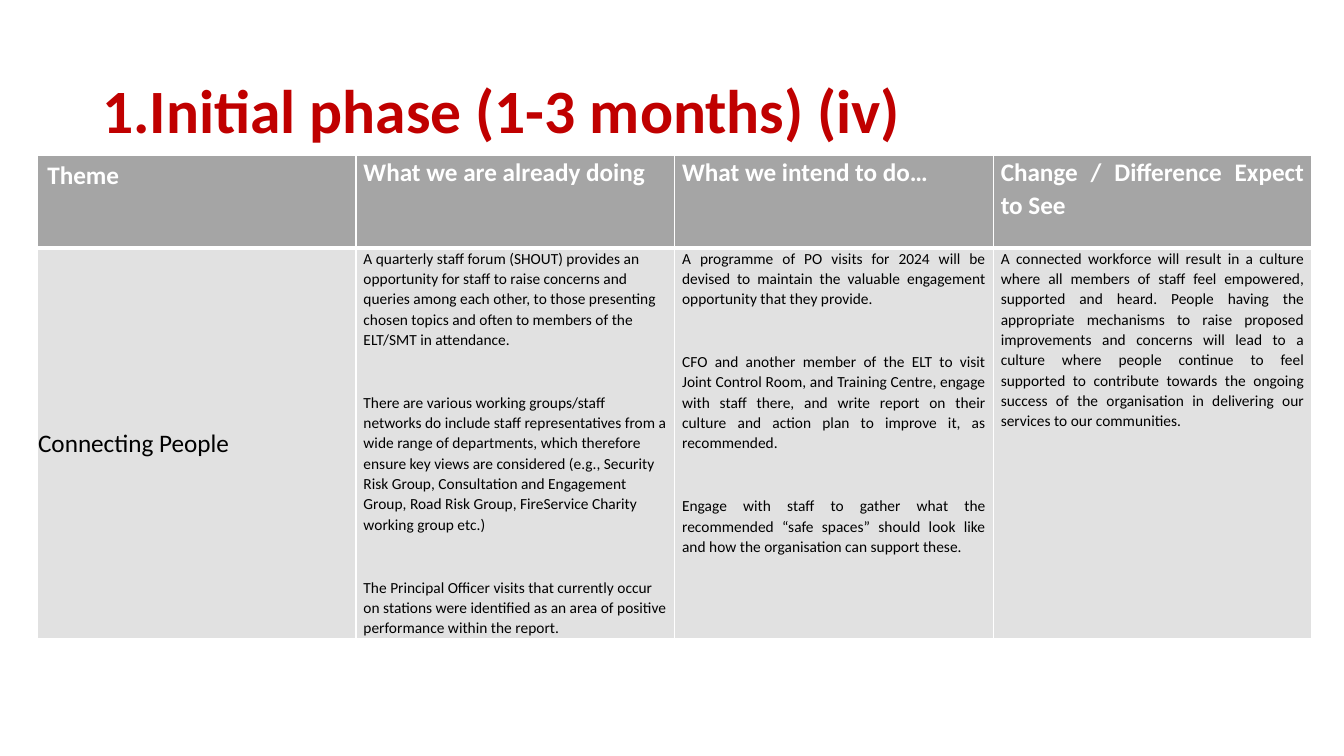
"""Build the slide with the theme, action and outcome table for the initial phase."""
import pptx
import pptx.dml.color
import pptx.enum.text
import pptx.oxml
import pptx.oxml.ns
import pptx.util

Cm, Pt = pptx.util.Cm, pptx.util.Pt
PP_ALIGN = pptx.enum.text.PP_ALIGN
MIDDLE = pptx.enum.text.MSO_ANCHOR.MIDDLE


def rgb(value):
    return pptx.dml.color.RGBColor.from_string(value)


def add_run(p, text, size, color, bold):
    r = p.add_run()
    r.text = text
    r.font.name = "Calibri"
    r.font.size = Pt(size)
    r.font.bold = bold
    r.font.color.rgb = rgb(color)


prs = pptx.Presentation()
prs.slide_width, prs.slide_height = Cm(33.87), Cm(19.05)
s = prs.slides.add_slide(prs.slide_layouts[6])

sp = s.shapes.add_textbox(Cm(2.33), Cm(1.01), Cm(29.21), Cm(3.68))
tf = sp.text_frame
tf.word_wrap = True
tf.vertical_anchor = MIDDLE
p = tf.paragraphs[0]
p.line_spacing = 0.9
add_run(p, "1.Initial phase (1-3 months) (iv)", 44, "C00000", True)

rows = [
    [
        ["Theme"],
        ["What we are already doing"],
        ["What we intend to do…"],
        ["Change / Difference Expect to See"],
    ],
    [
        ["Connecting People"],
        [
            "A quarterly staff forum (SHOUT) provides an opportunity for staff to raise concerns and "
            "queries among each other, to those presenting chosen topics and often to members of the "
            "ELT/SMT in attendance.",
            "There are various working groups/staff networks do include staff representatives from a "
            "wide range of departments, which therefore ensure key views are considered (e.g., Security "
            "Risk Group, Consultation and Engagement Group, Road Risk Group, FireService Charity working "
            "group etc.)",
            "The Principal Officer visits that currently occur on stations were identified as an area of "
            "positive performance within the report.",
        ],
        [
            "A programme of PO visits for 2024 will be devised to maintain the valuable engagement "
            "opportunity that they provide.",
            "CFO and another member of the ELT to visit Joint Control Room, and Training Centre, engage "
            "with staff there, and write report on their culture and action plan to improve it, as "
            "recommended.",
            "Engage with staff to gather what the recommended “safe spaces” should look like and how the "
            "organisation can support these.",
        ],
        [
            "A connected workforce will result in a culture where all members of staff feel empowered, "
            "supported and heard. People having the appropriate mechanisms to raise proposed improvements "
            "and concerns will lead to a culture where people continue to feel supported to contribute "
            "towards the ongoing success of the organisation in delivering our services to our communities.",
        ],
    ],
]
heights = [2.33, 9.83]
fills = ["A5A5A5", "E1E1E1"]
colors = ["FFFFFF", "000000"]
borders = [
    {"lnL": 1, "lnR": 1, "lnT": 1, "lnB": 3},
    {"lnL": 1, "lnR": 1, "lnT": 3, "lnB": 1},
]

table = s.shapes.add_table(2, 4, Cm(0.94), Cm(3.92), Cm(32.12), Cm(sum(heights))).table
for column in table.columns:
    column.width = Cm(8.03)

for i, row in enumerate(rows):
    table.rows[i].height = Cm(heights[i])
    for j, paragraphs in enumerate(row):
        cell = table.cell(i, j)
        tc_pr = cell._tc.get_or_add_tcPr()
        for side, width in borders[i].items():
            tc_pr.append(pptx.oxml.parse_xml(
                f'<a:{side} {pptx.oxml.ns.nsdecls("a")} w="{Pt(width)}"><a:solidFill>'
                f'<a:srgbClr val="FFFFFF"/></a:solidFill></a:{side}>'))
        cell.fill.solid()
        cell.fill.fore_color.rgb = rgb(fills[i])
        if j > 0:
            cell.margin_left = cell.margin_right = Cm(0.19)
            cell.margin_top = cell.margin_bottom = 0
        elif i == 1:
            cell.margin_left = cell.margin_right = cell.margin_top = Cm(0.02)
            cell.margin_bottom = 0
            cell.vertical_anchor = MIDDLE

        tf = cell.text_frame
        for k, text in enumerate(paragraphs):
            p = tf.paragraphs[0] if k == 0 else tf.add_paragraph()
            if j > 0:
                p.line_spacing = 1.07
                p.space_after = Pt(8)
                p.alignment = PP_ALIGN.LEFT if (i, j) == (1, 1) else PP_ALIGN.JUSTIFY
            if k > 0:
                p.space_before = Pt(22.4)
            add_run(p, text, 11 if i == 1 and j > 0 else 18, colors[i], i == 0)

prs.save("out.pptx")
